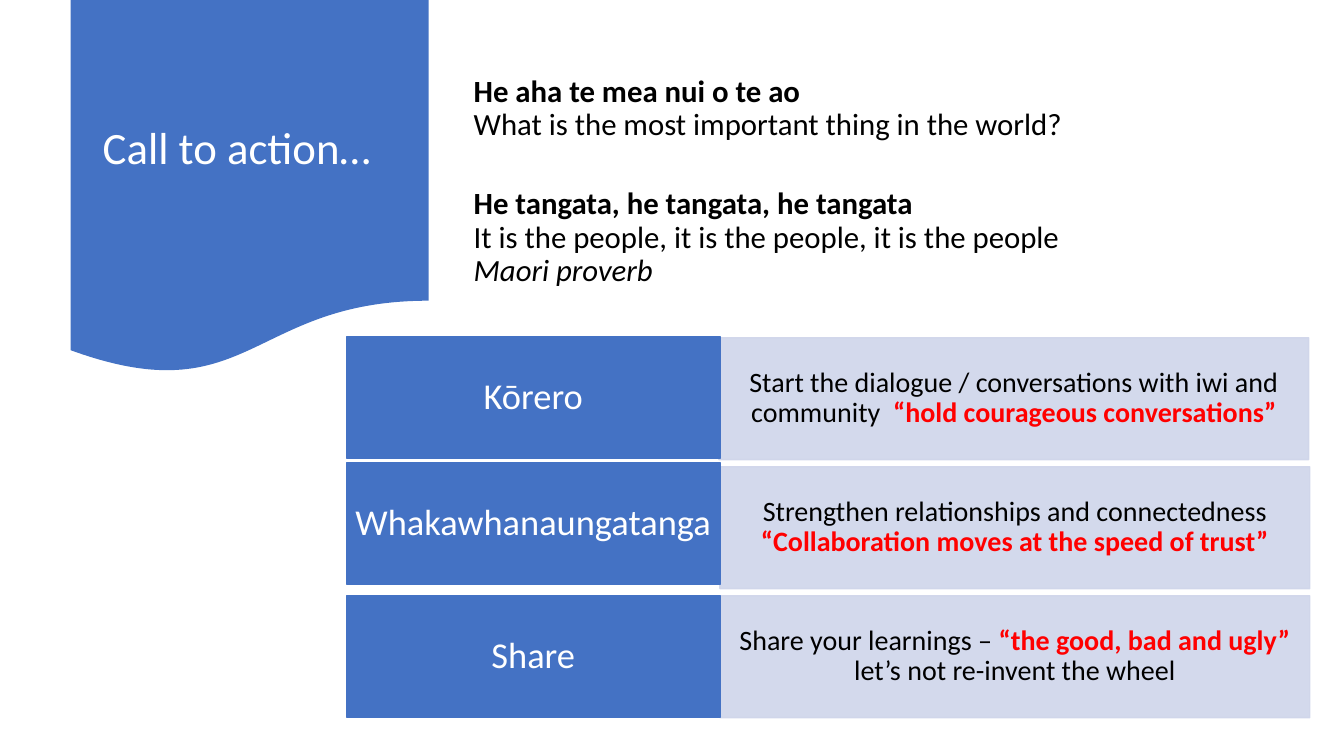
from lxml import etree
from pptx import Presentation
from pptx.dml.color import RGBColor
from pptx.enum.shapes import MSO_SHAPE
from pptx.enum.text import MSO_ANCHOR, PP_ALIGN
from pptx.oxml.ns import qn
from pptx.util import Inches, Pt

RECTANGLE = MSO_SHAPE.RECTANGLE
DOCUMENT = MSO_SHAPE.FLOWCHART_DOCUMENT
TOP, MIDDLE = MSO_ANCHOR.TOP, MSO_ANCHOR.MIDDLE
LEFT, CENTER = PP_ALIGN.LEFT, PP_ALIGN.CENTER

COLORS = {
    "blue": "4472C4",
    "pale": "CFD5EA",
    "white": "FFFFFF",
    "black": "000000",
    "red": "FF0000",
}


class SlideBuilder:
    font = "Calibri"
    line_spacing = 0.9

    def __init__(self, slide):
        self.slide = slide

    def color(self, name):
        return RGBColor.from_string(COLORS[name])

    def add_block(self, kind, box, fill, outlined=True, opacity=100):
        shape = self.slide.shapes.add_shape(kind, *map(Inches, box))
        shape.shadow.inherit = False
        shape.fill.solid()
        shape.fill.fore_color.rgb = self.color(fill)
        if outlined:
            shape.line.color.rgb = self.color(fill)
            shape.line.width = Pt(1)
        else:
            shape.line.fill.background()
        if opacity < 100:
            for color in shape.element.spPr.iter(qn("a:srgbClr")):
                etree.SubElement(color, qn("a:alpha"), val=str(opacity * 1000))
        return shape

    def add_text_box(self, box):
        return self.slide.shapes.add_textbox(*map(Inches, box))

    def add_text(self, shape, lines, size, anchor=MIDDLE, align=CENTER, margins=(0.1, 0.05)):
        """Each line is (space before, runs); each run is (text, color, style)."""
        frame = shape.text_frame
        frame.word_wrap = True
        frame.vertical_anchor = anchor
        frame.margin_left = frame.margin_right = Inches(margins[0])
        frame.margin_top = frame.margin_bottom = Inches(margins[1])
        for index, (space_before, runs) in enumerate(lines):
            paragraph = frame.add_paragraph() if index else frame.paragraphs[0]
            paragraph.alignment = align
            paragraph.line_spacing = self.line_spacing
            paragraph.space_before = Pt(space_before)
            for text, color, style in runs:
                run = paragraph.add_run()
                run.text = text
                run.font.name = self.font
                run.font.size = Pt(size)
                run.font.color.rgb = self.color(color)
                run.font.bold = style == "bold"
                run.font.italic = style == "italic"


def main():
    presentation = Presentation()
    presentation.slide_width = Inches(13.33)
    presentation.slide_height = Inches(7.5)
    builder = SlideBuilder(presentation.slides.add_slide(presentation.slide_layouts[6]))

    # Title banner
    builder.add_block(DOCUMENT, (0.7, 0, 3.55, 3.72), "blue", outlined=False)
    title = builder.add_text_box((0.92, 0.19, 3.11, 2.59))
    builder.add_text(title, [(0, [("Call to action…", "white", "")])], 32, align=LEFT)

    # Proverb
    proverb = [
        (0, "He aha te mea nui o te ao", "bold"),
        (0, "What is the most important thing in the world?", ""),
        (33, "He tangata, he tangata, he tangata", "bold"),
        (0, "It is the people, it is the people, it is the people", ""),
        (0, "Maori proverb", "italic"),
    ]
    lines = [(space, [(text, "black", style)]) for space, text, style in proverb]
    builder.add_text(builder.add_text_box((4.6, 0.7, 8.03, 2.27)), lines, 22, TOP, LEFT)

    # Actions: label top, detail left and top, label, detail runs
    actions = [
        (3.34, 7.13, 3.35, "Kōrero", [
            ("Start the dialogue / conversations with iwi and community  ", "black", ""),
            ("“hold courageous conversations”", "red", "bold"),
        ]),
        (4.59, 7.14, 4.63, "Whakawhanaungatanga", [
            ("Strengthen relationships and connectedness ", "black", ""),
            ("“Collaboration moves at the speed of trust”", "red", "bold"),
        ]),
        (5.91, 7.14, 5.91, "Share", [
            ("Share your learnings – ", "black", ""),
            ("“the good, bad and ugly” ", "red", "bold"),
            ("let’s not re-invent the wheel", "black", ""),
        ]),
    ]
    for label_top, detail_left, detail_top, label, detail_runs in actions:
        detail_box = builder.add_block(
            RECTANGLE, (detail_left, detail_top, 5.85, 1.21), "pale", opacity=90)
        builder.add_text(detail_box, [(0, detail_runs)], 20, margins=(0.11, 0.31))
        label_box = builder.add_block(RECTANGLE, (3.44, label_top, 3.7, 1.21), "blue")
        builder.add_text(label_box, [(0, [(label, "white", "")])], 26, margins=(0.08, 0.12))

    presentation.save("out.pptx")


if __name__ == "__main__":
    main()
